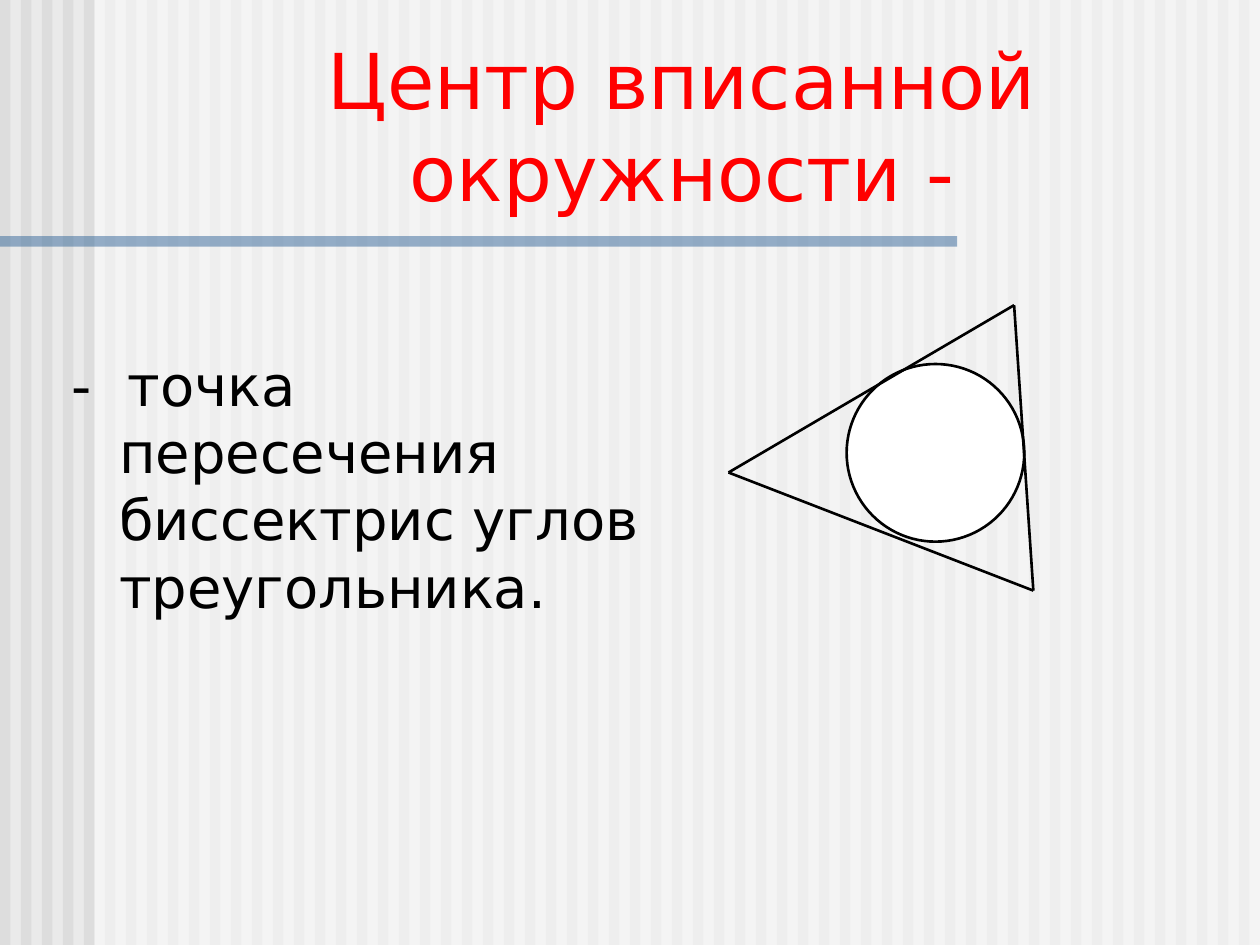
"""Build a geometry slide about the centre of the inscribed circle."""
import dataclasses
import itertools
import typing

import lxml.etree
import pptx
import pptx.dml.color
import pptx.enum.shapes
import pptx.enum.text
import pptx.oxml.ns
import pptx.util

Pt = pptx.util.Pt
COLOURS = {
    "background": "EAEAEA",
    "stripe": "DDDDDD",
    "white": "FFFFFF",
    "rule": "336699",
    "title": "FF0000",
    "ink": "000000",
}
FONT = "DejaVu Sans"
SLIDE_WIDTH, SLIDE_HEIGHT = 720, 540
STRIPE_WIDTH, STRIPE_PITCH = 6, 12


@dataclasses.dataclass(frozen=True)
class Box:
    left: float
    top: float
    width: float
    height: float

    def lengths(self) -> list:
        return [Pt(value) for value in dataclasses.astuple(self)]


@dataclasses.dataclass(frozen=True)
class Band:
    box: Box
    colour: str
    opacity: int = 100


@dataclasses.dataclass(frozen=True)
class TextBlock:
    box: Box
    wording: str
    size: float
    colour: str
    frame_format: dict
    paragraph_format: dict


def rgb(name: str) -> pptx.dml.color.RGBColor:
    return pptx.dml.color.RGBColor.from_string(COLOURS[name])


def set_format(target: typing.Any, values: dict) -> None:
    for attribute, value in values.items():
        setattr(target, attribute, value)


def paint(fill: typing.Any, colour: str) -> None:
    fill.solid()
    fill.fore_color.rgb = rgb(colour)


def add_child(parent: typing.Any, tag: str, **attributes: str) -> None:
    lxml.etree.SubElement(parent, pptx.oxml.ns.qn(tag), **attributes)


def draw_band(shapes: typing.Any, band: Band) -> None:
    rectangle = shapes.add_shape(
        pptx.enum.shapes.MSO_SHAPE.RECTANGLE, *band.box.lengths())
    rectangle.shadow.inherit = False
    rectangle.line.fill.background()
    paint(rectangle.fill, band.colour)
    if band.opacity < 100:
        tint = rectangle.element.spPr.find(".//" + pptx.oxml.ns.qn("a:srgbClr"))
        add_child(tint, "a:alpha", val=str(band.opacity * 1000))


def outline(line: typing.Any) -> None:
    paint(line.fill, "ink")
    line.width = Pt(1.5)


def draw_circle(shapes: typing.Any, box: Box) -> None:
    circle = shapes.add_shape(pptx.enum.shapes.MSO_SHAPE.OVAL, *box.lengths())
    circle.shadow.inherit = False
    paint(circle.fill, "white")
    outline(circle.line)


def draw_side(shapes: typing.Any, start: tuple, end: tuple) -> None:
    side = shapes.add_connector(
        pptx.enum.shapes.MSO_CONNECTOR.STRAIGHT,
        *(Pt(value) for value in start + end))
    outline(side.line)
    add_child(side.element.spPr, "a:effectLst")


def fill_placeholder(placeholder: typing.Any, block: TextBlock) -> None:
    set_format(placeholder, dict(zip(("left", "top", "width", "height"),
                                     block.box.lengths())))
    frame = placeholder.text_frame
    frame.text = block.wording
    set_format(frame, block.frame_format)
    paragraph = frame.paragraphs[0]
    set_format(paragraph, block.paragraph_format)
    font = paragraph.runs[0].font
    set_format(font, {"name": FONT, "size": Pt(block.size)})
    font.color.rgb = rgb(block.colour)


def main() -> None:
    deck = pptx.Presentation()
    set_format(deck, {"slide_width": Pt(SLIDE_WIDTH),
                      "slide_height": Pt(SLIDE_HEIGHT)})
    slide = deck.slides.add_slide(deck.slide_layouts[1])
    paint(slide.background.fill, "background")
    heading, definition = slide.placeholders

    backdrop = slide.shapes.add_group_shape()
    for left in range(0, SLIDE_WIDTH, STRIPE_PITCH):
        draw_band(backdrop.shapes,
                  Band(Box(left, 0, STRIPE_WIDTH, SLIDE_HEIGHT), "stripe"))
    draw_band(backdrop.shapes, Band(Box(54, 0, 666, SLIDE_HEIGHT), "white", 50))
    draw_band(backdrop.shapes, Band(Box(0, 135, 547, 6), "rule", 50))

    fill_placeholder(heading, TextBlock(
        Box(68.4, 13.7, 643, 113.8), "Центр вписанной окружности -", 44, "title",
        {"vertical_anchor": pptx.enum.text.MSO_ANCHOR.BOTTOM,
         "auto_size": pptx.enum.text.MSO_AUTO_SIZE.SHAPE_TO_FIT_TEXT,
         "word_wrap": True},
        {"alignment": pptx.enum.text.PP_ALIGN.CENTER}))
    fill_placeholder(definition, TextBlock(
        Box(33.8, 196.6, 348.5, 283),
        "-  точка пересечения биссектрис углов треугольника.", 32, "ink",
        {"vertical_anchor": pptx.enum.text.MSO_ANCHOR.TOP,
         "auto_size": pptx.enum.text.MSO_AUTO_SIZE.NONE,
         "word_wrap": True},
        {"alignment": pptx.enum.text.PP_ALIGN.LEFT}))
    properties = definition.text_frame.paragraphs[0]._p.get_or_add_pPr()
    for attribute, indent in {"marL": Pt(27), "indent": Pt(-27)}.items():
        properties.set(attribute, str(int(indent)))
    add_child(properties, "a:buNone")
    for placeholder in (heading, definition):
        slide.shapes.element.append(placeholder.element)

    figure = slide.shapes.add_group_shape()
    draw_circle(figure.shapes, Box(483.8, 208, 101.5, 101.5))
    vertices = [(416.3, 270), (579.5, 174.4), (590.5, 337.5)]
    for start, end in itertools.combinations(vertices, 2):
        draw_side(figure.shapes, start, end)

    deck.save("out.pptx")


if __name__ == "__main__":
    main()
